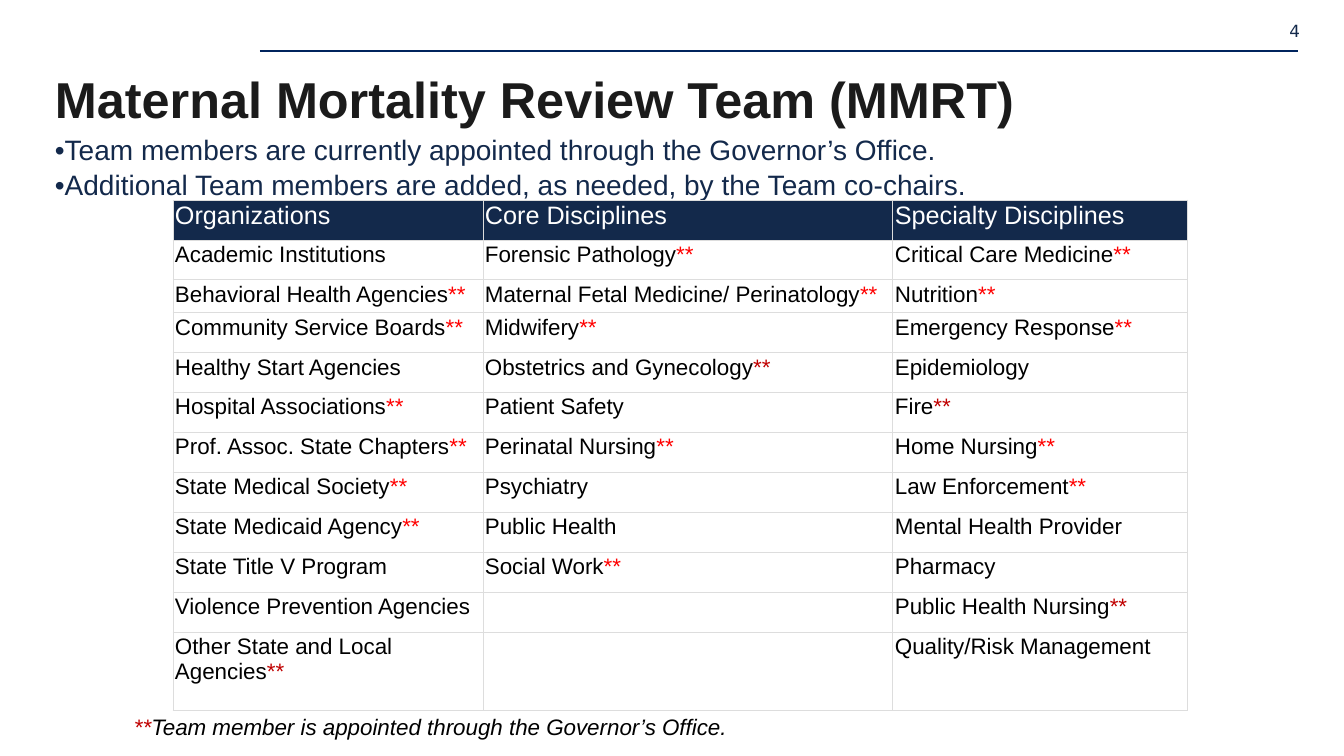
"""Build the Maternal Mortality Review Team slide."""
from lxml import etree
from pptx import Presentation
from pptx.dml.color import RGBColor
from pptx.enum.shapes import MSO_CONNECTOR
from pptx.enum.text import MSO_ANCHOR, PP_ALIGN
from pptx.oxml.ns import qn
from pptx.util import Emu, Pt

STRAIGHT = MSO_CONNECTOR.STRAIGHT
TOP, MIDDLE = MSO_ANCHOR.TOP, MSO_ANCHOR.MIDDLE
LEFT, RIGHT = PP_ALIGN.LEFT, PP_ALIGN.RIGHT

NAVY, RULE, INK = "13294B", "00245D", "1B1B1B"
BLACK, WHITE, GRID = "000000", "FFFFFF", "DDDDDD"
RED, DEEP = "FF0000", "C00000"
MARK = "**"

TITLE = "Maternal Mortality Review Team (MMRT)"
POINTS = [
    "•Team members are currently appointed through the Governor’s Office.",
    "•Additional Team members are added, as needed, by the Team co-chairs.",
]
NOTE = "Team member is appointed through the Governor’s Office."
NUMBER = "4"
ROWS = [
    ("Organizations", "Core Disciplines", "Specialty Disciplines"),
    ("Academic Institutions", "Forensic Pathology**", "Critical Care Medicine**"),
    ("Behavioral Health Agencies**", "Maternal Fetal Medicine/ Perinatology**", "Nutrition**"),
    ("Community Service Boards**", "Midwifery**", "Emergency Response**"),
    ("Healthy Start Agencies", "Obstetrics and Gynecology**", "Epidemiology"),
    ("Hospital Associations**", "Patient Safety", "Fire**"),
    ("Prof. Assoc. State Chapters**", "Perinatal Nursing**", "Home Nursing**"),
    ("State Medical Society**", "Psychiatry", "Law Enforcement**"),
    ("State Medicaid Agency**", "Public Health", "Mental Health Provider"),
    ("State Title V Program", "Social Work**", "Pharmacy"),
    ("Violence Prevention Agencies", "", "Public Health Nursing**"),
    ("Other State and Local Agencies**", "", "Quality/Risk Management"),
]
DARK_MARKS = {"Obstetrics and Gynecology", "Fire", "Public Health Nursing",
              "Other State and Local Agencies"}
WIDTHS = [310, 410, 295]
HEIGHTS = [40, 40, 33] + [40] * 8 + [78]


def px(n):
    return Emu(round(n * 914400 / 100.8))


def color(code):
    return RGBColor.from_string(code)


def add_run(para, text, size, code, font="Arial", bold=False, italic=False):
    run = para.add_run()
    run.text = text
    face = run.font
    face.name, face.size, face.bold, face.italic = font, Pt(size), bold, italic
    face.color.rgb = color(code)


def add_box(slide, place, lines, anchor=TOP, align=LEFT, pad=None, lead=None):
    frame = slide.shapes.add_textbox(*map(px, place)).text_frame
    frame.word_wrap = True
    frame.vertical_anchor = anchor
    if pad is not None:
        frame.margin_left = frame.margin_right = px(pad)
        frame.margin_top = frame.margin_bottom = px(pad)
    for i, runs in enumerate(lines):
        para = frame.add_paragraph() if i else frame.paragraphs[0]
        para.alignment = align
        para.line_spacing = lead
        for text, style in runs:
            add_run(para, text, **style)


def add_edges(cell):
    props = cell._tc.get_or_add_tcPr()
    for side in ("a:lnL", "a:lnR", "a:lnT", "a:lnB"):
        edge = etree.SubElement(props, qn(side), w=str(Pt(0.75)))
        fill = etree.SubElement(edge, qn("a:solidFill"))
        etree.SubElement(fill, qn("a:srgbClr"), val=GRID)


def fill_cell(cell, text, head):
    add_edges(cell)
    cell.fill.solid()
    cell.fill.fore_color.rgb = color(NAVY if head else WHITE)
    cell.vertical_anchor = TOP
    cell.margin_left = cell.margin_right = px(2)
    cell.margin_top = cell.margin_bottom = px(2)
    para = cell.text_frame.paragraphs[0]
    name = text.removesuffix(MARK)
    if name:
        add_run(para, name, 18 if head else 16, WHITE if head else BLACK)
    if name != text:
        add_run(para, MARK, 16, DEEP if name in DARK_MARKS else RED)


def add_grid(slide, left, top):
    size = px(sum(WIDTHS)), px(sum(HEIGHTS))
    table = slide.shapes.add_table(len(ROWS), len(WIDTHS), px(left), px(top), *size).table
    table.horz_banding = False
    for col, width in zip(table.columns, WIDTHS):
        col.width = px(width)
    for r, (row, height) in enumerate(zip(ROWS, HEIGHTS)):
        table.rows[r].height = px(height)
        for c, text in enumerate(row):
            fill_cell(table.cell(r, c), text, r == 0)


def main():
    deck = Presentation()
    deck.slide_width, deck.slide_height = px(1344), px(756)
    slide = deck.slides.add_slide(deck.slide_layouts[6])

    rule = slide.shapes.add_connector(STRAIGHT, px(260), px(51), px(1298), px(51))
    rule.line.color.rgb = color(RULE)
    rule.line.width = Pt(0.75)
    etree.SubElement(rule._element.spPr, qn("a:effectLst"))

    add_box(slide, (45, 56, 1252, 85),
            [[(TITLE, dict(size=36, code=INK, bold=True))]], MIDDLE, pad=10)
    add_box(slide, (45, 126, 1252, 148),
            [[(point, dict(size=20, code=NAVY))] for point in POINTS], lead=1.05)
    add_box(slide, (1229, 13, 81, 43),
            [[(NUMBER, dict(size=12, code=NAVY, font="DejaVu Sans"))]],
            MIDDLE, RIGHT, pad=10, lead=0.5)
    add_grid(slide, 173, 200)
    add_box(slide, (124, 708, 1046, 37),
            [[(MARK, dict(size=16, code=DEEP, italic=True)),
              (NOTE, dict(size=16, code=BLACK, italic=True))]])
    deck.save("out.pptx")


if __name__ == "__main__":
    main()
